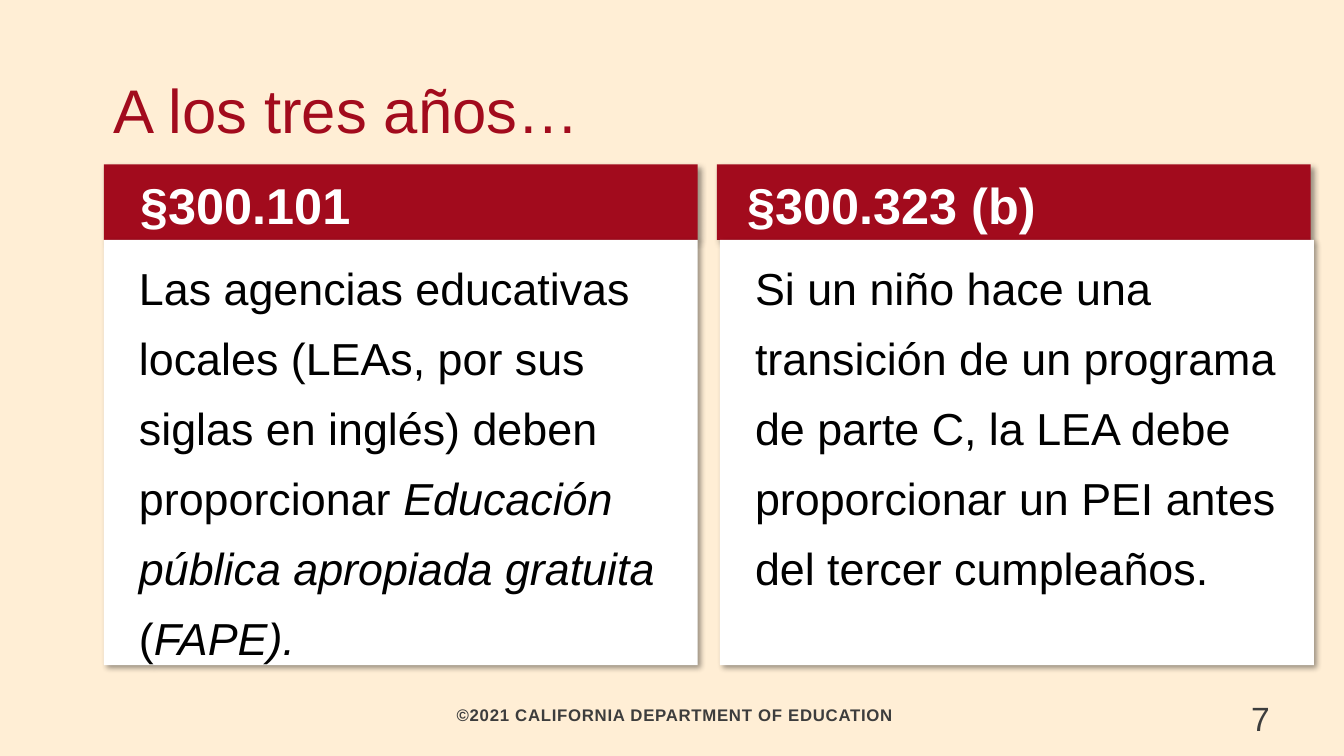
from dataclasses import dataclass

from lxml import etree
from pptx import Presentation
from pptx.dml.color import RGBColor
from pptx.enum.shapes import MSO_SHAPE
from pptx.enum.text import MSO_ANCHOR, PP_ALIGN
from pptx.oxml.ns import qn
from pptx.util import Emu, Pt

RECT = MSO_SHAPE.RECTANGLE
TOP, MID, LOW = MSO_ANCHOR.TOP, MSO_ANCHOR.MIDDLE, MSO_ANCHOR.BOTTOM
LEFT, MIDDLE = PP_ALIGN.LEFT, PP_ALIGN.CENTER
PX = 9144


@dataclass(frozen=True)
class Theme:
    font: str = "Arial"
    cream: str = "FFEED5"
    red: str = "A20B1D"
    white: str = "FFFFFF"
    black: str = "000000"
    gray: str = "3D3D3D"
    title: int = 44
    head: int = 36
    body: int = 32
    page: int = 24
    foot: int = 12


@dataclass(frozen=True)
class Box:
    left: int
    top: int
    width: int
    height: int


@dataclass(frozen=True)
class Run:
    text: str
    slant: bool = False


@dataclass(frozen=True)
class Style:
    size: int
    color: str
    bold: bool = False
    anchor: MSO_ANCHOR = TOP
    align: PP_ALIGN = LEFT
    lines: float | Pt = 1.0
    after: int = 0
    margins: tuple[int, int, int, int] = (10, 5, 10, 5)
    indent: int = 0
    hang: int = 0
    track: int = 0


@dataclass(frozen=True)
class Card:
    head_left: int
    body_left: int
    head_indent: int
    head: str
    body: tuple[Run, ...]
    after: int


THEME = Theme()
WIDTH, HEAD_TOP, HEAD_TALL, BODY_TALL = 589, 163, 75, 422
CARDS = (
    Card(103, 103, 31, "§300.101", (
        Run("Las agencias educativas locales (LEAs, por sus siglas en inglés) "
            "deben proporcionar "),
        Run("Educación pública apropiada gratuita ", True),
        Run("("),
        Run("FAPE).", True),
    ), 12),
    Card(711, 714, 25, "§300.323 (b)", (
        Run("Si un niño hace una transición de un programa de parte C, la LEA "
            "debe proporcionar un PEI antes del tercer cumpleaños."),
    ), 5),
)


def px(count: int) -> Emu:
    return Emu(count * PX)


def frame(box: Box) -> tuple[Emu, Emu, Emu, Emu]:
    return px(box.left), px(box.top), px(box.width), px(box.height)


def write(shape, runs: tuple[Run, ...], style: Style) -> None:
    text = shape.text_frame
    text.word_wrap = True
    text.vertical_anchor = style.anchor
    (text.margin_left, text.margin_top,
     text.margin_right, text.margin_bottom) = map(px, style.margins)
    para = text.paragraphs[0]
    para.alignment = style.align
    para.line_spacing = style.lines
    para.space_after = Pt(style.after)
    props = para._p.get_or_add_pPr()
    props.set("marL", str(px(style.indent)))
    props.set("indent", str(px(style.hang)))
    font = para.font
    font.name = THEME.font
    font.size = Pt(style.size)
    font.bold = style.bold
    font.color.rgb = RGBColor.from_string(style.color)
    if style.track:
        font._element.set("spc", str(style.track))
    for part in runs:
        run = para.add_run()
        run.text = part.text
        if part.slant:
            run.font.italic = True


def label(slide, box: Box, text: str, style: Style) -> None:
    write(slide.shapes.add_textbox(*frame(box)), (Run(text),), style)


def shade(shape) -> None:
    shape.shadow.inherit = False
    effects = shape._element.spPr.find(qn("a:effectLst"))
    outer = etree.SubElement(
        effects, qn("a:outerShdw"), blurRad=str(Pt(4)), dist=str(Pt(3)),
        dir="2700000", algn="tl", rotWithShape="0")
    color = etree.SubElement(outer, qn("a:srgbClr"), val=THEME.black)
    etree.SubElement(color, qn("a:alpha"), val="40000")


def panel(slide, box: Box, fill: str, runs: tuple[Run, ...], style: Style) -> None:
    shape = slide.shapes.add_shape(RECT, *frame(box))
    shape.fill.solid()
    shape.fill.fore_color.rgb = RGBColor.from_string(fill)
    shape.line.fill.background()
    shade(shape)
    write(shape, runs, style)


def draw(slide, card: Card) -> None:
    panel(slide, Box(card.head_left, HEAD_TOP, WIDTH, HEAD_TALL), THEME.red,
          (Run(card.head),),
          Style(THEME.head, THEME.white, bold=True, anchor=LOW, lines=0.9,
                after=5, margins=(5, 2, 5, 5), indent=card.head_indent))
    panel(slide, Box(card.body_left, HEAD_TOP + HEAD_TALL, WIDTH, BODY_TALL),
          THEME.white, card.body,
          Style(THEME.body, THEME.black, lines=Pt(50), after=card.after,
                indent=25))


def main() -> None:
    deck = Presentation()
    deck.slide_width, deck.slide_height = px(1333), px(750)
    slide = deck.slides.add_slide(deck.slide_layouts[6])
    back = slide.background.fill
    back.solid()
    back.fore_color.rgb = RGBColor.from_string(THEME.cream)
    label(slide, Box(103, 696, 1128, 29),
          "©2021 CALIFORNIA DEPARTMENT OF EDUCATION",
          Style(THEME.foot, THEME.gray, bold=True, anchor=MID, align=MIDDLE,
                lines=0.95, indent=50, hang=-45, track=50))
    label(slide, Box(103, 25, 1200, 125), "A los tres años…",
          Style(THEME.title, THEME.red, anchor=LOW, lines=0.85))
    for card in CARDS:
        draw(slide, card)
    label(slide, Box(1231, 687, 103, 49), "7", Style(THEME.page, THEME.gray))
    deck.save("out.pptx")


if __name__ == "__main__":
    main()
